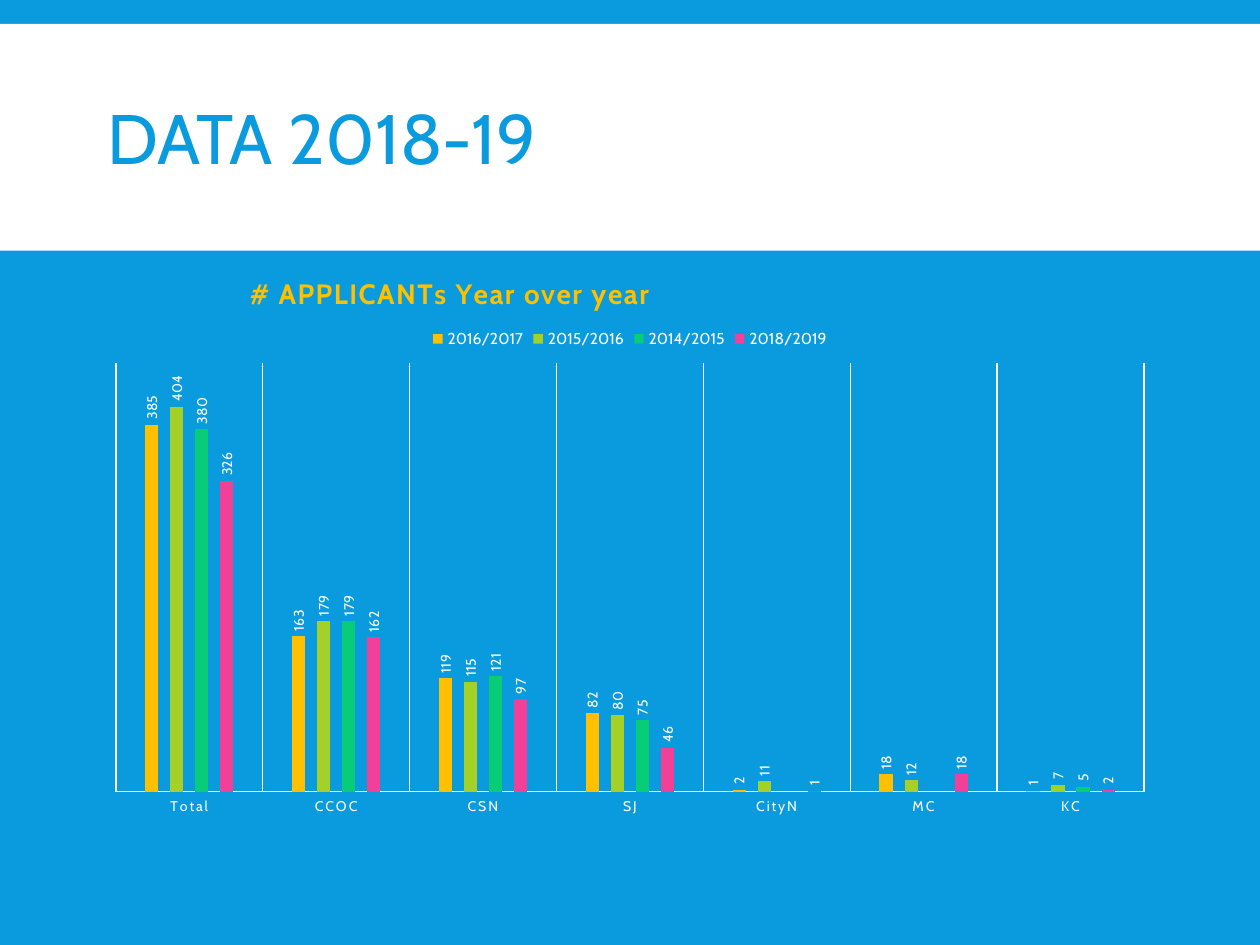
from lxml import etree
from pptx import Presentation
from pptx.chart.data import CategoryChartData
from pptx.dml.color import RGBColor
from pptx.enum.chart import XL_CHART_TYPE, XL_LABEL_POSITION, XL_LEGEND_POSITION, XL_TICK_MARK
from pptx.enum.shapes import MSO_SHAPE
from pptx.enum.text import MSO_ANCHOR, PP_ALIGN
from pptx.oxml import parse_xml
from pptx.oxml.ns import nsdecls, qn
from pptx.util import Inches, Pt

RECTANGLE = MSO_SHAPE.RECTANGLE
COLUMNS = XL_CHART_TYPE.COLUMN_CLUSTERED
OUTSIDE_END = XL_LABEL_POSITION.OUTSIDE_END
LEGEND_TOP = XL_LEGEND_POSITION.TOP
NO_TICK = XL_TICK_MARK.NONE
MIDDLE = MSO_ANCHOR.MIDDLE
LEFT = PP_ALIGN.LEFT

BLUE, WHITE, GOLD = "099BDD", "FFFFFF", "FFC000"
CATEGORIES = ["Total", "CCOC", "CSN", "SJ", "CityN", "MC", "KC"]
APPLICANTS = [
    ("2016/2017", GOLD, [385, 163, 119, 82, 2, 18, 1]),
    ("2015/2016", "A5D028", [404, 179, 115, 80, 11, 12, 7]),
    ("2014/2015", "08CC78", [380, 179, 121, 75, None, None, 5]),
    ("2018/2019", "F24099", [326, 162, 97, 46, 1, 18, 2]),
]


def color(hex_value):
    return RGBColor.from_string(hex_value)


def apply_format(target, values):
    for name, value in values.items():
        setattr(target, name, value)


def manual_layout(**values):
    """Place a chart part by fractions of the chart area."""
    layout = parse_xml(f"<c:layout {nsdecls('c')}><c:manualLayout/></c:layout>")
    for name, value in values.items():
        etree.SubElement(layout[0], qn(f"c:{name}")).set("val", str(value))
    return layout


class SlideBuilder:
    font_name = "Cabin"

    def __init__(self, slide):
        self.slide = slide

    def set_font(self, font, size, hex_value, bold=False):
        apply_format(font, {"name": self.font_name, "size": Pt(size), "bold": bold})
        font.color.rgb = color(hex_value)

    def background(self, hex_value):
        fill = self.slide.background.fill
        fill.solid()
        fill.fore_color.rgb = color(hex_value)

    def band(self, left, top, width, height, hex_value):
        shape = self.slide.shapes.add_shape(RECTANGLE, left, top, width, height)
        shape.shadow.inherit = False
        shape.fill.solid()
        shape.fill.fore_color.rgb = color(hex_value)
        shape.line.fill.background()
        # Keep the band behind the title
        self.slide.shapes._spTree.insert(2, shape._element)

    def title(self, text, left, top, width, height):
        title = self.slide.shapes.title
        apply_format(title, {"left": left, "top": top, "width": width, "height": height})
        title.text_frame.text = text
        apply_format(title.text_frame, {"vertical_anchor": MIDDLE, "word_wrap": True})
        paragraph = title.text_frame.paragraphs[0]
        apply_format(paragraph, {"alignment": LEFT, "line_spacing": 0.85})
        self.set_font(paragraph.runs[0].font, 40, BLUE)

    def column_chart(self, heading, categories, rows, left, top, width, height):
        data = CategoryChartData()
        data.categories = categories
        for name, _, values in rows:
            data.add_series(name, values)
        chart = self.slide.shapes.add_chart(COLUMNS, left, top, width, height, data).chart
        self.set_font(chart.font, 10, WHITE)
        self.chart_title(chart, heading)
        self.legend(chart)
        self.axes(chart)

        # Columns and their upright value labels
        plot = chart.plots[0]
        apply_format(plot, {"gap_width": 444, "overlap": -90, "vary_by_categories": False})
        for series, (_, hex_value, _) in zip(plot.series, rows):
            series.format.fill.solid()
            series.format.fill.fore_color.rgb = color(hex_value)
            labels = series.data_labels
            apply_format(labels, {"show_value": True, "position": OUTSIDE_END})
            self.set_font(labels.font, 8, WHITE)
            body = labels._element.find(f"{qn('c:txPr')}/{qn('a:bodyPr')}")
            body.set("rot", "-5400000")
            body.set("vert", "horz")

        plot_area = chart._chartSpace.chart.plotArea
        for layout in plot_area.findall(qn("c:layout")):
            plot_area.remove(layout)
        plot_area.insert(0, manual_layout(
            layoutTarget="inner", xMode="edge", yMode="edge",
            x=0.02, y=0.2, w=0.96, h=0.74))

    def chart_title(self, chart, heading):
        title = chart.chart_title
        title.text_frame.text = heading
        run = title.text_frame.paragraphs[0].runs[0]
        self.set_font(run.font, 16, GOLD, bold=True)
        run.font._element.set("spc", "100")
        title.include_in_layout = False
        element = title._element
        for layout in element.findall(qn("c:layout")):
            element.remove(layout)
        element.find(qn("c:tx")).addnext(
            manual_layout(xMode="edge", yMode="edge", x=0.14, y=0.04))

    def legend(self, chart):
        chart.has_legend = True
        apply_format(chart.legend, {"position": LEGEND_TOP, "include_in_layout": False})
        self.set_font(chart.legend.font, 9, WHITE)

    def axes(self, chart):
        apply_format(chart.value_axis, {
            "visible": False, "has_major_gridlines": False,
            "minimum_scale": 0, "maximum_scale": 450})
        axis = chart.category_axis
        apply_format(axis, {
            "has_major_gridlines": True,
            "major_tick_mark": NO_TICK, "minor_tick_mark": NO_TICK})
        for line in (axis.format.line, axis.major_gridlines.format.line):
            line.width = Pt(0.75)
            line.color.rgb = color(WHITE)
        self.set_font(axis.tick_labels.font, 8, WHITE)
        axis.tick_labels.font._element.set("spc", "100")


def main():
    presentation = Presentation()
    presentation.slide_width = Inches(10)
    presentation.slide_height = Inches(7.5)
    builder = SlideBuilder(presentation.slides.add_slide(presentation.slide_layouts[5]))

    # Header
    builder.background(BLUE)
    builder.band(0, Inches(0.19), Inches(10), Inches(1.8), WHITE)
    builder.title("DATA 2018-19", Inches(0.75), Inches(0.31), Inches(8.5), Inches(1.65))

    # Applicants per category and year
    builder.column_chart("# APPLICANTs Year over year", CATEGORIES, APPLICANTS,
                         Inches(0.75), Inches(1.96), Inches(8.5), Inches(4.6))

    presentation.save("out.pptx")


if __name__ == "__main__":
    main()
